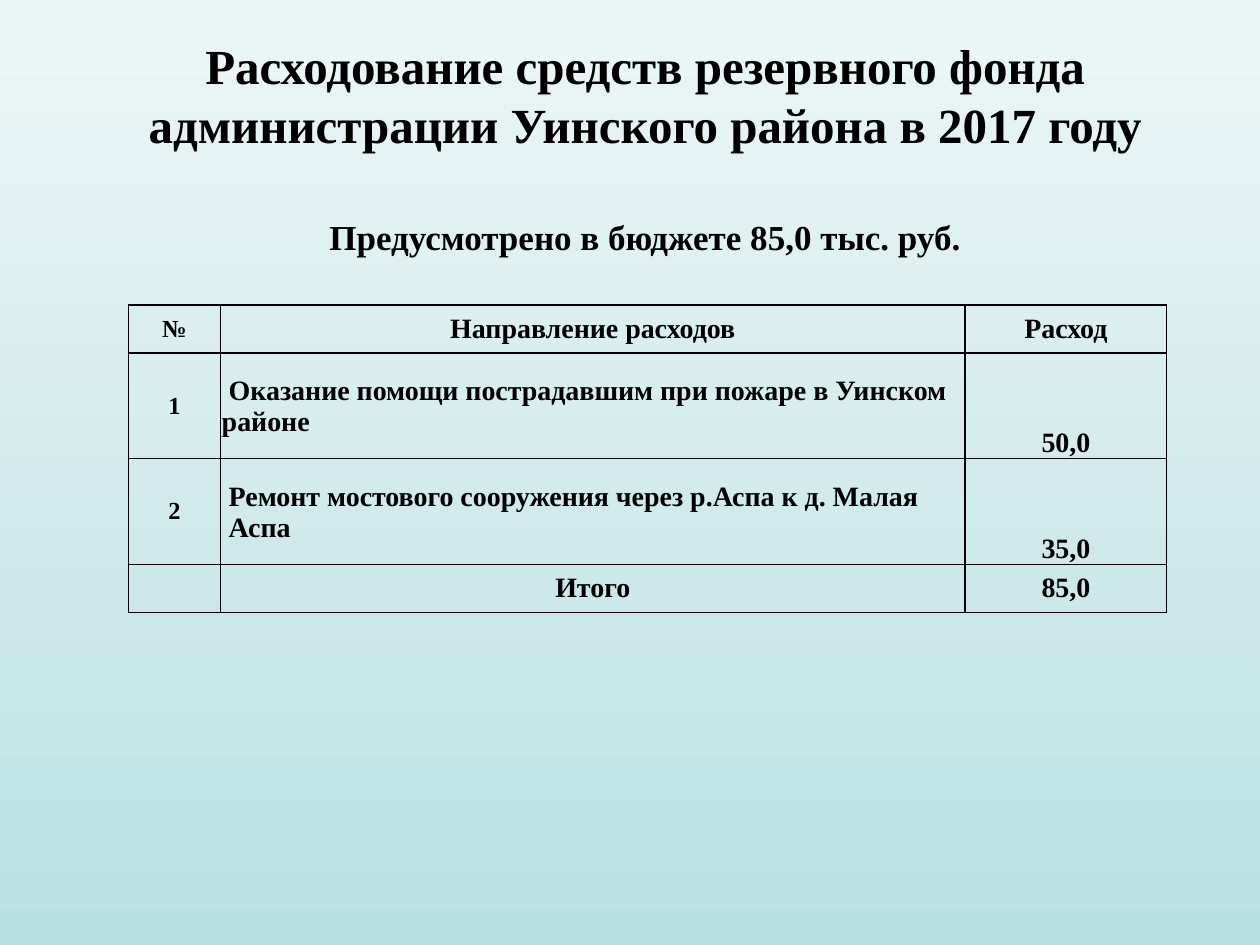
from dataclasses import dataclass

import pptx
import pptx.dml.color
import pptx.enum.text
import pptx.oxml
import pptx.oxml.ns
import pptx.util
from pptx.util import Inches

ALIGN = pptx.enum.text.PP_ALIGN
ANCHOR = pptx.enum.text.MSO_ANCHOR


@dataclass(frozen=True)
class Theme:
    font: str = "Times New Roman"
    ink: str = "000000"
    background_top: str = "ECF6F6"
    background_bottom: str = "BBE0E3"
    title_size: int = 28
    subtitle_size: int = 20
    table_size: int = 16
    number_size: int = 14
    border_width: int = 1


THEME = Theme()

COLUMN_WIDTHS = (0.73, 5.91, 1.6)
ROW_HEIGHTS = (0.38, 0.84, 0.84, 0.38)
EXPENSES = (
    ("№", "Направление расходов", "Расход"),
    ("1", " Оказание помощи пострадавшим при пожаре в Уинском районе", "50,0"),
    ("2", " Ремонт мостового сооружения через р.Аспа к д. Малая\n Аспа", "35,0"),
    ("", "Итого", "85,0"),
)


def rgb(value):
    return pptx.dml.color.RGBColor.from_string(value)


def write_text(paragraph, text, size=THEME.table_size, align=ALIGN.CENTER, space_before=0):
    paragraph.alignment = align
    paragraph.space_before = pptx.util.Pt(space_before)
    run = paragraph.add_run()
    run.text = text
    run.font.name = THEME.font
    run.font.size = pptx.util.Pt(size)
    run.font.bold = True
    run.font.color.rgb = rgb(THEME.ink)


def set_margins(target, side, top, bottom):
    target.margin_left = target.margin_right = Inches(side)
    target.margin_top = Inches(top)
    target.margin_bottom = Inches(bottom)


def paint_background(slide):
    fill = slide.background.fill
    fill.gradient()
    fill.gradient_angle = 270
    colors = (THEME.background_top, THEME.background_bottom)
    for stop, color in zip(fill.gradient_stops, colors):
        stop.color.rgb = rgb(color)


def add_title(slide):
    title = slide.shapes.title
    title.left, title.top = Inches(0.94), Inches(0.21)
    title.width, title.height = Inches(8.36), Inches(1.9)
    frame = title.text_frame
    frame.word_wrap = True
    frame.auto_size = pptx.enum.text.MSO_AUTO_SIZE.NONE
    frame.vertical_anchor = ANCHOR.TOP
    set_margins(frame, 0.1, 0.07, 0.05)
    write_text(
        frame.paragraphs[0],
        "Расходование средств резервного фонда администрации Уинского района в 2017 году",
        size=THEME.title_size,
    )
    write_text(
        frame.add_paragraph(),
        "Предусмотрено в бюджете 85,0 тыс. руб.",
        size=THEME.subtitle_size,
        space_before=36,
    )


def set_borders(cell):
    properties = cell._tc.get_or_add_tcPr()
    width = pptx.util.Pt(THEME.border_width)
    for index, side in enumerate(("lnL", "lnR", "lnT", "lnB")):
        line = pptx.oxml.parse_xml(
            f'<a:{side} {pptx.oxml.ns.nsdecls("a")} w="{width}"><a:solidFill>'
            f'<a:srgbClr val="{THEME.ink}"/></a:solidFill></a:{side}>'
        )
        properties.insert(index, line)


def fill_cell(cell, text, row, column):
    is_item = row in (1, 2)
    cell.fill.background()
    set_borders(cell)
    cell.vertical_anchor = ANCHOR.BOTTOM if is_item and column == 2 else ANCHOR.MIDDLE
    if is_item and column > 0:
        set_margins(cell, 0.01, 0.01, 0)
    if not text:
        set_margins(cell, 0, 0, 0)
        return
    size = THEME.number_size if column == 0 else THEME.table_size
    align = ALIGN.LEFT if is_item and column == 1 else ALIGN.CENTER
    frame = cell.text_frame
    for index, line in enumerate(text.split("\n")):
        paragraph = frame.add_paragraph() if index else frame.paragraphs[0]
        write_text(paragraph, line, size=size, align=align)


def add_expense_table(slide):
    table = slide.shapes.add_table(
        len(ROW_HEIGHTS), len(COLUMN_WIDTHS), Inches(1.02), Inches(2.42),
        Inches(sum(COLUMN_WIDTHS)), Inches(sum(ROW_HEIGHTS)),
    ).table
    table.first_row = table.horz_banding = False
    for column, width in zip(table.columns, COLUMN_WIDTHS):
        column.width = Inches(width)
    for row, height in zip(table.rows, ROW_HEIGHTS):
        row.height = Inches(height)
    for row, texts in enumerate(EXPENSES):
        for column, text in enumerate(texts):
            fill_cell(table.cell(row, column), text, row, column)


def main():
    presentation = pptx.Presentation()
    presentation.slide_width = Inches(10)
    presentation.slide_height = Inches(7.5)
    slide = presentation.slides.add_slide(presentation.slide_layouts[5])
    paint_background(slide)
    add_title(slide)
    add_expense_table(slide)
    presentation.save("out.pptx")


if __name__ == "__main__":
    main()
